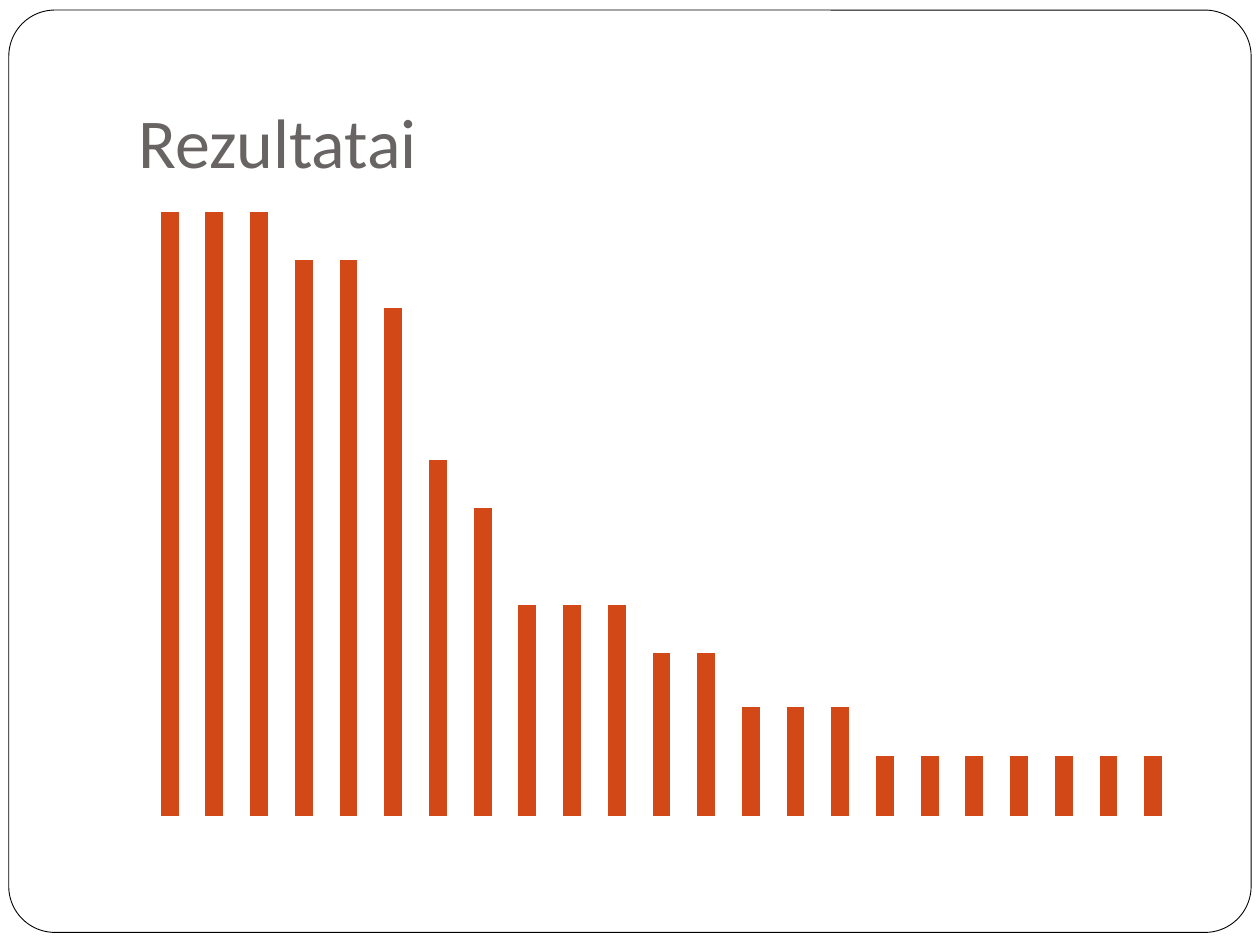
from dataclasses import dataclass

from pptx import Presentation, util as u
from pptx.chart.data import CategoryChartData
from pptx.dml.color import RGBColor
from pptx.enum import chart as ch, shapes, text

HUES = {"page": "FFFFFF", "edge": "000000", "title": "696464", "bar": "D34817"}
FONT = "Calibri"


@dataclass
class Run:
    """Neighbouring bars of one height."""
    value: int
    count: int


RUNS = [Run(100, 3), Run(92, 2), Run(84, 1), Run(59, 1), Run(51, 1),
        Run(35, 3), Run(27, 2), Run(18, 3), Run(10, 7)]


def hue(name: str) -> RGBColor:
    return RGBColor.from_string(HUES[name])


def box(left: float, top: float, width: float, height: float) -> list[u.Length]:
    return [u.Inches(n) for n in (left, top, width, height)]


def draw_frame(slide) -> None:
    frame = slide.shapes.add_shape(
        shapes.MSO_SHAPE.ROUNDED_RECTANGLE, *box(0.07, 0.08, 9.86, 7.32))
    frame.adjustments[0] = 0.05
    frame.shadow.inherit = False
    frame.fill.solid()
    frame.fill.fore_color.rgb = hue("page")
    frame.line.color.rgb = hue("edge")
    frame.line.width = u.Pt(0.5)


def draw_title(slide, words: str) -> None:
    body = slide.shapes.add_textbox(*box(1, 0.3, 8.5, 1.25)).text_frame
    body.word_wrap = True
    body.vertical_anchor = text.MSO_ANCHOR.BOTTOM
    body.margin_bottom = u.Inches(0.1)
    line = body.paragraphs[0]
    line.text = words
    line.font.name = FONT
    line.font.size = u.Pt(40)
    line.font.color.rgb = hue("title")


def draw_chart(slide, runs: list[Run]) -> None:
    vals = [run.value for run in runs for _ in range(run.count)]
    data = CategoryChartData()
    data.categories = [str(n) for n in range(1, len(vals) + 1)]
    data.add_series("Series 1", vals)
    chart = slide.shapes.add_chart(
        ch.XL_CHART_TYPE.COLUMN_CLUSTERED, *box(1, 1.58, 8.5, 5), data).chart
    chart.has_legend = False
    chart.has_title = False
    chart.font.name = FONT
    chart.font.size = u.Pt(18)
    chart.font.color.rgb = hue("edge")

    scale = chart.value_axis
    scale.minimum_scale, scale.maximum_scale = 0, 100
    scale.major_unit = 1000
    scale.has_major_gridlines = False
    scale.visible = False
    chart.category_axis.visible = False

    plot = chart.plots[0]
    plot.gap_width = 150
    plot.vary_by_categories = False
    fill = plot.series[0].format.fill
    fill.solid()
    fill.fore_color.rgb = hue("bar")


def main() -> None:
    deck = Presentation()
    deck.slide_width, deck.slide_height = u.Inches(10), u.Inches(7.5)
    slide = deck.slides.add_slide(deck.slide_layouts[6])
    draw_frame(slide)
    draw_title(slide, "Rezultatai")
    draw_chart(slide, RUNS)
    deck.save("out.pptx")


if __name__ == "__main__":
    main()
